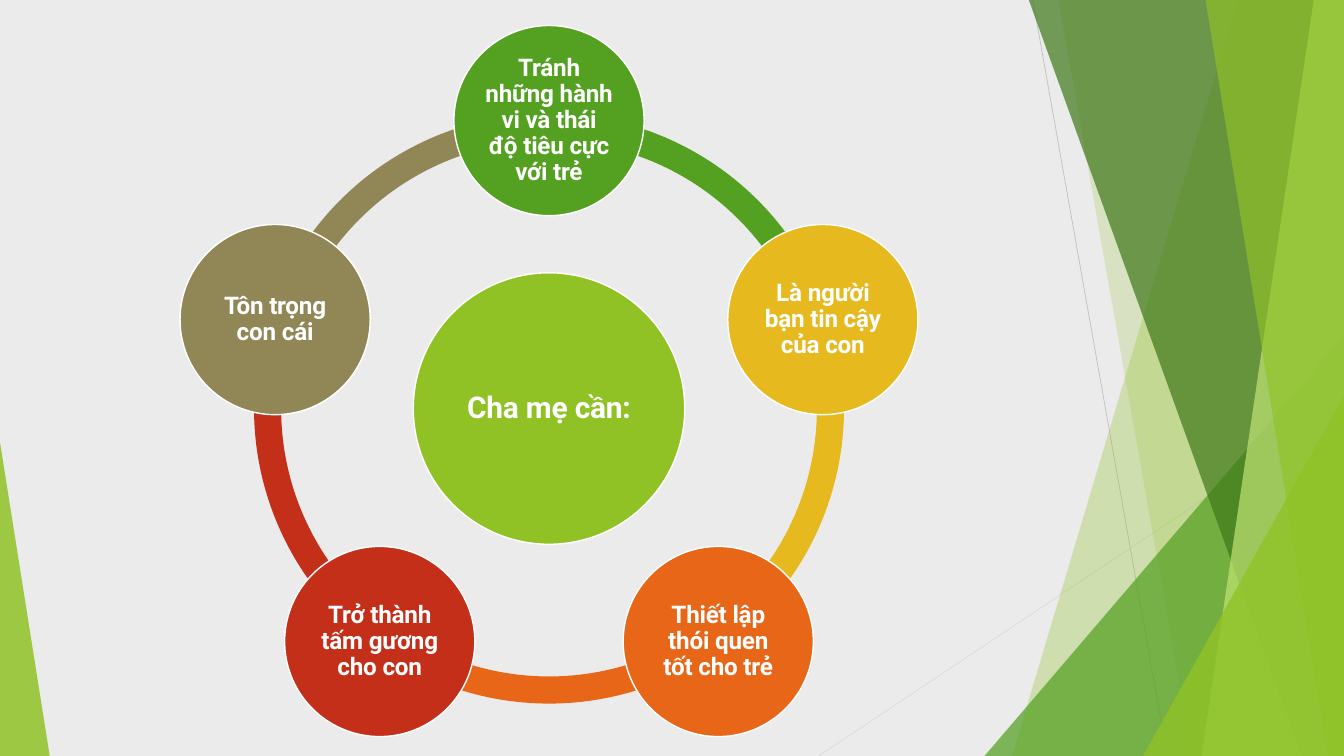
from dataclasses import dataclass
from math import cos, radians, sin

from lxml import etree
from pptx import Presentation
from pptx.dml.color import RGBColor
from pptx.enum.shapes import MSO_CONNECTOR, MSO_SHAPE
from pptx.enum.text import MSO_ANCHOR, PP_ALIGN
from pptx.oxml.ns import qn
from pptx.util import Inches, Pt

STRAIGHT = MSO_CONNECTOR.STRAIGHT
ELLIPSE = MSO_SHAPE.OVAL
ARC = MSO_SHAPE.BLOCK_ARC
TRIANGLE = MSO_SHAPE.ISOSCELES_TRIANGLE
MIDDLE = MSO_ANCHOR.MIDDLE
CENTER = PP_ALIGN.CENTER

COLS, ROWS = 20, 11.25
FONT = "Roboto"
WHITE = "FFFFFF"
LIME = "90C226"
GREEN = "54A021"

HUB_X, HUB_Y = 8.17, 6.08
HUB_SIZE, NODE_SIZE, RING_SIZE = 4.04, 2.83, 8.78
ORBIT = 4.285
RING_THICKNESS = 0.046
TOP_ANGLE = 270
DEGREE = 0.6


@dataclass
class Ray:
    x1: float
    y1: float
    x2: float
    y2: float
    color: str


@dataclass
class Band:
    top_x: float
    bottom_x: float
    color: str
    opacity: int


@dataclass
class Corner:
    left: float
    top: float
    width: float
    apex: float
    color: str
    opacity: int


@dataclass
class Node:
    text: str
    color: str


RAYS = [
    Ray(15.37, 0, 17.37, ROWS, "BFBFBF"),
    Ray(COLS, 6.04, 12.18, ROWS, "D9D9D9"),
]
FACETS = [
    Band(18.42, 15.06, LIME, 30),
    Band(15.75, 17.74, LIME, 20),
    Corner(14.65, 5, 5.35, 1, GREEN, 72),
    Band(15.31, 19.37, "3F7819", 70),
    Band(19.55, 17.88, "C0E474", 70),
    Band(17.94, 19.76, LIME, 65),
    Corner(17.01, 5.89, 2.99, 1, LIME, 80),
    Corner(0, 6.58, 0.74, 0, LIME, 85),
]
NODES = [
    Node("Tránh những hành vi và thái độ tiêu cực với trẻ", GREEN),
    Node("Là người bạn tin cậy của con", "E6B91E"),
    Node("Thiết lập thói quen tốt cho trẻ", "E76618"),
    Node("Trở thành tấm gương cho con", "C42F1A"),
    Node("Tôn trọng con cái", "918655"),
]


def rgb(color: str) -> RGBColor:
    return RGBColor.from_string(color)


def paint(sp, color: str, opacity: int = 100) -> None:
    sp.shadow.inherit = False
    sp.fill.solid()
    sp.fill.fore_color.rgb = rgb(color)
    sp.line.fill.background()
    if opacity < 100:
        clr = sp.fill._xPr.find(qn("a:solidFill"))[0]
        etree.SubElement(clr, qn("a:alpha")).set("val", str(opacity * 1000))


def add_ray(s, ray: Ray) -> None:
    ends = [Inches(v) for v in (ray.x1, ray.y1, ray.x2, ray.y2)]
    line = s.shapes.add_connector(STRAIGHT, *ends)
    line.line.color.rgb = rgb(ray.color)
    line.line.width = Pt(0.75)
    etree.SubElement(line._element.spPr, qn("a:effectLst"))


def add_band(s, band: Band) -> None:
    builder = s.shapes.build_freeform(Inches(band.top_x), 0)
    corners = [(COLS, 0), (COLS, ROWS), (band.bottom_x, ROWS)]
    builder.add_line_segments([(Inches(x), Inches(y)) for x, y in corners])
    paint(builder.convert_to_shape(), band.color, band.opacity)


def add_corner(s, corner: Corner) -> None:
    sp = s.shapes.add_shape(TRIANGLE, Inches(corner.left), Inches(corner.top),
                            Inches(corner.width), Inches(ROWS - corner.top))
    sp.adjustments[0] = corner.apex
    paint(sp, corner.color, corner.opacity)


def add_round(s, kind, x: float, y: float, size: float, color: str):
    sp = s.shapes.add_shape(kind, Inches(x - size / 2), Inches(y - size / 2),
                            Inches(size), Inches(size))
    paint(sp, color)
    return sp


def add_arc(s, start: float, sweep: float, color: str) -> None:
    sp = add_round(s, ARC, HUB_X, HUB_Y, RING_SIZE, color)
    sp.adjustments[0] = start % 360 * DEGREE
    sp.adjustments[1] = (start + sweep) % 360 * DEGREE
    sp.adjustments[2] = RING_THICKNESS


def add_disc(s, x: float, y: float, size: float, node: Node, points: int) -> None:
    sp = add_round(s, ELLIPSE, x, y, size, node.color)
    sp.line.color.rgb = rgb(WHITE)
    sp.line.width = Pt(1.5)
    tf = sp.text_frame
    tf.word_wrap = True
    tf.vertical_anchor = MIDDLE
    tf.margin_left = tf.margin_right = tf.margin_top = tf.margin_bottom = Inches(0.04)
    tf.text = node.text
    p = tf.paragraphs[0]
    p.alignment = CENTER
    p.line_spacing = 0.9
    r = p.runs[0]
    r.font.name = FONT
    r.font.size = Pt(points)
    r.font.bold = True
    r.font.color.rgb = rgb(WHITE)
    r._r.get_or_add_rPr().set("spc", "-25")


def main() -> None:
    prs = Presentation()
    prs.slide_width, prs.slide_height = Inches(COLS), Inches(ROWS)
    s = prs.slides.add_slide(prs.slide_layouts[6])
    s.background.fill.solid()
    s.background.fill.fore_color.rgb = rgb("EBEBEB")

    for ray in RAYS:
        add_ray(s, ray)
    for facet in FACETS:
        if isinstance(facet, Band):
            add_band(s, facet)
        else:
            add_corner(s, facet)

    sweep = 360 / len(NODES)
    angles = [TOP_ANGLE + i * sweep for i in range(len(NODES))]
    for angle, node in reversed(list(zip(angles, NODES))):
        add_arc(s, angle, sweep, node.color)
    add_disc(s, HUB_X, HUB_Y, HUB_SIZE, Node("Cha mẹ cần:", LIME), 32)
    for angle, node in zip(angles, NODES):
        x = HUB_X + ORBIT * cos(radians(angle))
        y = HUB_Y + ORBIT * sin(radians(angle))
        add_disc(s, x, y, NODE_SIZE, node, 26)

    prs.save("out.pptx")


if __name__ == "__main__":
    main()
